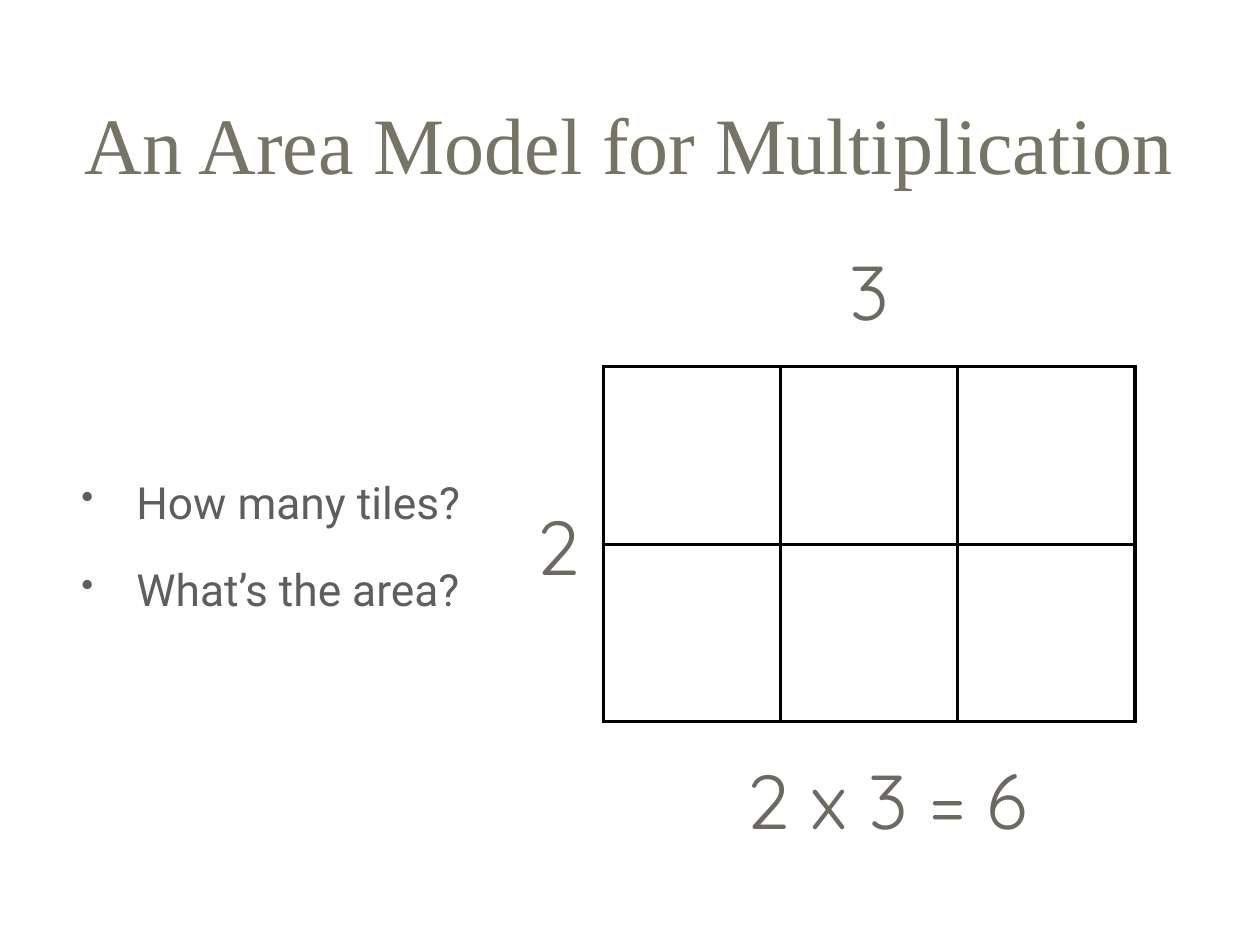
from lxml.etree import SubElement
from pptx import Presentation
from pptx.dml.color import RGBColor
from pptx.enum.text import MSO_ANCHOR, MSO_AUTO_SIZE, PP_ALIGN
from pptx.oxml import parse_xml
from pptx.oxml.ns import nsdecls, qn
from pptx.util import Inches, Pt

COLORS = {"title": "767367", "question": "5E5E5E", "number": "6C6963", "grid": "000000"}
FORMATS = {
    "title": {"name": "Times New Roman", "size": Pt(65)},
    "question": {"name": "Roboto", "size": Pt(36)},
    "number": {"name": "Quicksand", "size": Pt(62)},
}
INSET = Inches(0.06)
FRAME = {
    "margin_left": INSET, "margin_right": INSET,
    "margin_top": INSET, "margin_bottom": INSET,
    "vertical_anchor": MSO_ANCHOR.MIDDLE,
}


def apply(target, values):
    for attribute, value in values.items():
        setattr(target, attribute, value)


class AreaSlide:
    def __init__(self, slide):
        self.slide = slide

    def text(self, lines, style, left, top, width, height, wrap=True, bullets=False):
        box = self.slide.shapes.add_textbox(
            Inches(left), Inches(top), Inches(width), Inches(height))
        frame = box.text_frame
        apply(frame, FRAME)
        frame.word_wrap = wrap
        frame.auto_size = MSO_AUTO_SIZE.NONE if wrap else MSO_AUTO_SIZE.SHAPE_TO_FIT_TEXT
        for index, line in enumerate(lines):
            paragraph = frame.add_paragraph() if index else frame.paragraphs[0]
            paragraph.text = line
            if bullets:
                self.bullet(paragraph)
            else:
                paragraph.alignment = PP_ALIGN.CENTER
            if index:
                paragraph.space_before = Pt(28)
            apply(paragraph.font, FORMATS[style])
            paragraph.font.color.rgb = RGBColor.from_string(COLORS[style])

    def bullet(self, paragraph):
        properties = paragraph._p.get_or_add_pPr()
        properties.set("marL", str(Inches(0.62)))
        properties.set("indent", str(-Inches(0.62)))
        SubElement(properties, qn("a:buSzPct"), val="80000")
        SubElement(properties, qn("a:buChar"), char="•")

    def tiles(self, rows, columns, left, top, width, height):
        """Draw the empty tiles as a table with a line around every cell."""
        table = self.slide.shapes.add_table(
            rows, columns, Inches(left), Inches(top), Inches(width), Inches(height)).table
        apply(table, {"first_row": False, "horz_banding": False})
        for tile in table.iter_cells():
            tile.fill.background()
            self.border(tile)

    def border(self, tile):
        properties = tile._tc.get_or_add_tcPr()
        for position, side in enumerate("LRTB"):
            properties.insert(position, parse_xml(
                f'<a:ln{side} {nsdecls("a")} w="{Pt(3)}"><a:solidFill>'
                f'<a:srgbClr val="{COLORS["grid"]}"/></a:solidFill></a:ln{side}>'))


def main():
    deck = Presentation()
    apply(deck, {"slide_width": Inches(14.22), "slide_height": Inches(10.67)})
    area = AreaSlide(deck.slides.add_slide(deck.slide_layouts[6]))

    area.text(["An Area Model for Multiplication"], "title", -0.31, 0.28, 14.83, 2.67)
    area.text(["How many tiles?", "What’s the area?"], "question",
              0.86, 3.03, 4.93, 6.25, bullets=True)
    area.tiles(2, 3, 6.81, 4.14, 6, 4.01)
    for label, left, top, width in (
        ("3", 9.51, 2.69, 0.6),
        ("2", 5.99, 5.57, 0.6),
        ("2 x 3 = 6", 8.29, 8.44, 3.45),
    ):
        area.text([label], "number", left, top, width, 1.17, wrap=False)

    deck.save("out.pptx")


if __name__ == "__main__":
    main()
